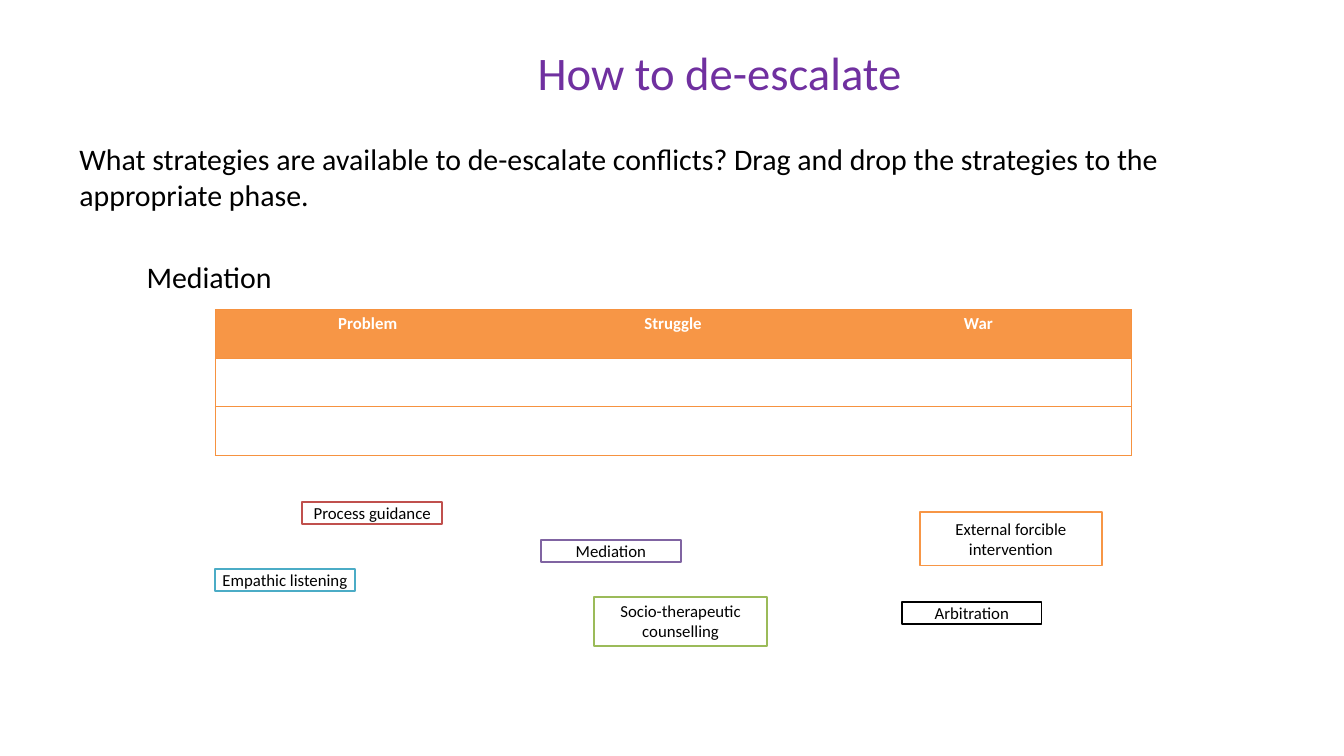
from dataclasses import dataclass

import pptx
import pptx.dml.color
import pptx.enum.shapes
import pptx.enum.text
import pptx.oxml.ns
import pptx.util
from lxml import etree

Cm = pptx.util.Cm
Pt = pptx.util.Pt
qn = pptx.oxml.ns.qn
PP_ALIGN = pptx.enum.text.PP_ALIGN
MSO_ANCHOR = pptx.enum.text.MSO_ANCHOR


@dataclass(frozen=True)
class Theme:
    font: str = "Calibri"
    title_size: int = 50
    body_size: int = 32
    label_size: int = 18
    purple: str = "7030A0"
    black: str = "000000"
    white: str = "FFFFFF"
    header: str = "F79646"
    border: str = "F69240"
    border_width: float = 0.75
    box_line: float = 2


def rgb(color):
    return pptx.dml.color.RGBColor.from_string(color)


class SlideBuilder:
    def __init__(self, s, theme):
        self.s = s
        self.theme = theme

    def format(self, p, size, color, align=PP_ALIGN.LEFT, bold=False):
        p.alignment = align
        for r in p.runs:
            r.font.name = self.theme.font
            r.font.size = Pt(size)
            r.font.bold = bold
            r.font.color.rgb = rgb(color)

    def title(self, text, left, top, width, height):
        sp = self.s.shapes.title
        sp.left, sp.top, sp.width, sp.height = map(Cm, (left, top, width, height))
        tf = sp.text_frame
        tf.text = text
        tf.auto_size = pptx.enum.text.MSO_AUTO_SIZE.NONE
        tf.vertical_anchor = MSO_ANCHOR.MIDDLE
        self.format(tf.paragraphs[0], self.theme.title_size, self.theme.purple, PP_ALIGN.CENTER)

    def body(self, question, answer, left, top, width, height):
        sp = self.s.shapes.add_textbox(*map(Cm, (left, top, width, height)))
        tf = sp.text_frame
        tf.word_wrap = True
        tf.text = question
        p = tf.add_paragraph()
        p.text = answer
        p.space_before = Pt(50)
        p._p.get_or_add_pPr().set("marL", str(Cm(2.54)))
        for p in tf.paragraphs:
            self.format(p, self.theme.body_size, self.theme.black)

    def cell_border(self, cell, side, color):
        ln = etree.Element(qn(f"a:ln{side}"), w=str(Pt(self.theme.border_width)))
        if color:
            fill = etree.SubElement(ln, qn("a:solidFill"))
            etree.SubElement(fill, qn("a:srgbClr"), val=color)
        else:
            etree.SubElement(ln, qn("a:noFill"))
        return ln

    def table(self, headings, row_count, left, top, width, height):
        columns = len(headings)
        frame = self.s.shapes.add_table(row_count, columns, *map(Cm, (left, top, width, height)))
        table = frame.table
        table.horz_banding = False
        for row in range(row_count):
            for col in range(columns):
                cell = table.cell(row, col)
                if row == 0:
                    cell.text = headings[col]
                    self.format(cell.text_frame.paragraphs[0], self.theme.label_size,
                                self.theme.white, PP_ALIGN.CENTER, True)
                    cell.fill.solid()
                    cell.fill.fore_color.rgb = rgb(self.theme.header)
                else:
                    cell.fill.background()
                edges = {
                    "L": self.theme.border if col == 0 else None,
                    "R": self.theme.border if col == columns - 1 else None,
                    "T": self.theme.border,
                    "B": self.theme.border,
                }
                tcPr = cell._tc.get_or_add_tcPr()
                for i, (side, color) in enumerate(edges.items()):
                    tcPr.insert(i, self.cell_border(cell, side, color))

    def strategy(self, text, color, left, top, width=5.28, height=0.84):
        sp = self.s.shapes.add_shape(pptx.enum.shapes.MSO_SHAPE.RECTANGLE,
                                     *map(Cm, (left, top, width, height)))
        sp.shadow.inherit = False
        sp.fill.solid()
        sp.fill.fore_color.rgb = rgb(self.theme.white)
        sp.line.color.rgb = rgb(color)
        sp.line.width = Pt(self.theme.box_line)
        tf = sp.text_frame
        tf.text = text
        tf.word_wrap = True
        tf.vertical_anchor = MSO_ANCHOR.MIDDLE
        tf.margin_left = tf.margin_right = Cm(0.2)
        tf.margin_top = tf.margin_bottom = 0
        self.format(tf.paragraphs[0], self.theme.label_size, self.theme.black, PP_ALIGN.CENTER)


def main():
    prs = pptx.Presentation()
    prs.slide_width = Cm(50.8)
    prs.slide_height = Cm(28.58)
    s = prs.slides.add_slide(prs.slide_layouts.get_by_name("Title Only"))
    builder = SlideBuilder(s, Theme())

    builder.title("How to de-escalate", 9.1, 1.15, 36.2, 3.17)
    builder.body(
        "What strategies are available to de-escalate conflicts? "
        "Drag and drop the strategies to the appropriate phase.",
        "Mediation", 2.75, 5.18, 44.65, 18.4)
    builder.table(["Problem", "Struggle", "War"], 3, 8.13, 11.71, 34.62, 5.5)

    strategies = [
        ("Empathic listening", "4BACC6", 8.13, 21.5),
        ("Mediation", "8064A2", 20.45, 20.42),
        ("Process guidance", "C0504D", 11.43, 18.97),
        ("Socio-therapeutic counselling", "9BBB59", 22.45, 22.56, 6.55, 1.85),
        ("External forcible intervention", "F79646", 34.77, 19.35, 6.88, 2.03),
        ("Arbitration", "000000", 34.09, 22.76),
    ]
    for strategy in strategies:
        builder.strategy(*strategy)

    prs.save("out.pptx")


if __name__ == "__main__":
    main()
